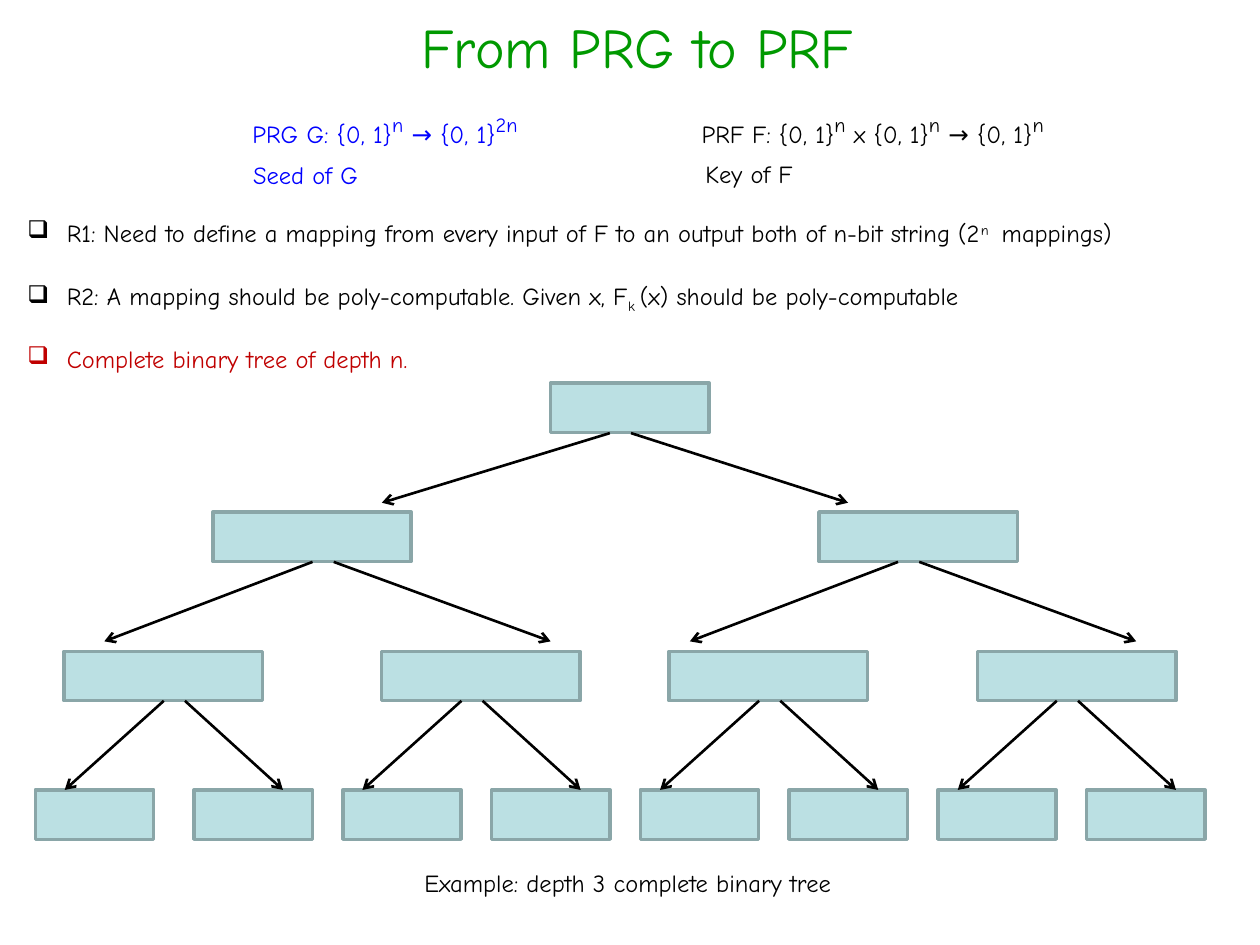
import pptx
import pptx.util
import pptx.dml.color
import pptx.enum.shapes
import pptx.enum.text
import pptx.oxml
import pptx.oxml.ns

Pt = pptx.util.Pt
RGBColor = pptx.dml.color.RGBColor
BLACK = RGBColor(0x00, 0x00, 0x00)
BLUE = RGBColor(0x00, 0x00, 0xFF)
GREEN = RGBColor(0x00, 0x99, 0x00)
RED = RGBColor(0xC0, 0x00, 0x00)
NODE_FILL = RGBColor(0xBB, 0xE0, 0xE3)
NODE_LINE = RGBColor(0x8A, 0xA6, 0xA8)
FONT = "Comic Neue"
NODE_HEIGHT = 28.3
ARROW_GAP = 12.1

prs = pptx.Presentation()
prs.slide_width, prs.slide_height = Pt(720), Pt(540)
s = prs.slides.add_slide(prs.slide_layouts[6])


def add_text(left, top, width, height, color, runs, size=14, wrap=True):
    sp = s.shapes.add_textbox(Pt(left), Pt(top), Pt(width), Pt(height))
    tf = sp.text_frame
    tf.word_wrap = wrap
    p = tf.paragraphs[0]
    for text, run_size, baseline in runs:
        r = p.add_run()
        r.text = text
        r.font.name = FONT
        r.font.size = Pt(run_size or size)
        r.font.color.rgb = color
        if baseline:
            r._r.get_or_add_rPr().set("baseline", str(baseline * 1000))
    return p


def append_xml(parent, tag, **attributes):
    child = pptx.oxml.parse_xml(f"<{tag} {pptx.oxml.ns.nsdecls('a')}/>")
    for name, value in attributes.items():
        child.set(name, value)
    parent.append(child)


title = add_text(11.5, 3.6, 705.6, 39.6, GREEN, [("From PRG to PRF", None, 0)], size=32)
title.alignment = pptx.enum.text.PP_ALIGN.CENTER

add_text(132.5, 58.3, 188, 24.5, BLUE, [
    (" PRG G: {0, 1}", None, 0), ("n", 20, 30), (" → {0, 1}", None, 0), ("2n", 20, 30)])
add_text(393.8, 58.3, 246.2, 24.5, BLACK, [
    ("PRF F: {0, 1}", None, 0), ("n", 20, 30), (" x {0, 1}", None, 0), ("n", 20, 30),
    (" → {0, 1}", None, 0), ("n", 20, 30)])
add_text(137.5, 87.8, 80.6, 24.5, BLUE, [("Seed of G", None, 0)], wrap=False)
add_text(396, 87.1, 69.8, 24.5, BLACK, [("Key of F", None, 0)], wrap=False)

bullets = [
    (121, 708.5, BLACK, [
        ("R1: Need to define a mapping from every input of F to an output both of n-bit string (2", None, 0),
        ("n ", None, 30), (" mappings)", None, 0)]),
    (157, 697.7, BLACK, [
        ("R2: A mapping should be poly-computable. Given x, F", None, 0),
        ("k ", None, -25), ("(x) should be poly-computable", None, 0)]),
    (193, 272.2, RED, [("Complete binary tree of depth n.", None, 0)]),
]
for top, width, color, runs in bullets:
    p = add_text(8.6, top, width, 24.5, color, runs)
    pPr = p._p.get_or_add_pPr()
    pPr.set("marL", str(Pt(22.5)))
    pPr.set("indent", str(-Pt(22.5)))
    append_xml(pPr, "a:buChar", char="❑")

add_text(235.4, 492.5, 283.7, 24.5, BLACK, [("Example: depth 3 complete binary tree", None, 0)])

levels = [
    (218.9, 90.7, [314.6]),
    (292.6, 113.4, [121.6, 468]),
    (372.2, 113.4, [36.7, 218, 382.3, 558.5]),
    (451.4, 67.7, [20.2] + [110.9 + 85 * i for i in range(7)]),
]
for top, width, lefts in levels:
    for left in lefts:
        sp = s.shapes.add_shape(pptx.enum.shapes.MSO_SHAPE.RECTANGLE,
                                Pt(left), Pt(top), Pt(width), Pt(NODE_HEIGHT))
        sp.shadow.inherit = False
        sp.fill.solid()
        sp.fill.fore_color.rgb = NODE_FILL
        sp.line.color.rgb = NODE_LINE
        sp.line.width = Pt(2)

branches = [
    (247.5, 287.3, [348.5], -130.3, 124),
    (321.1, 366.5, [178.6, 513.2], -119, 124),
    (400.5, 451.4, [93.6 + 170.1 * i for i in range(4)], -56.6, 56),
]
for y1, y2, starts, left_run, right_run in branches:
    for start in starts:
        for x, run in ((start, left_run), (start + ARROW_GAP, right_run)):
            arrow = s.shapes.add_connector(pptx.enum.shapes.MSO_CONNECTOR.STRAIGHT,
                                           Pt(x), Pt(y1), Pt(x + run), Pt(y2))
            arrow.line.color.rgb = BLACK
            arrow.line.width = Pt(1.5)
            append_xml(arrow.line._get_or_add_ln(), "a:tailEnd", type="arrow")
            append_xml(arrow._element.spPr, "a:effectLst")

prs.save("out.pptx")
